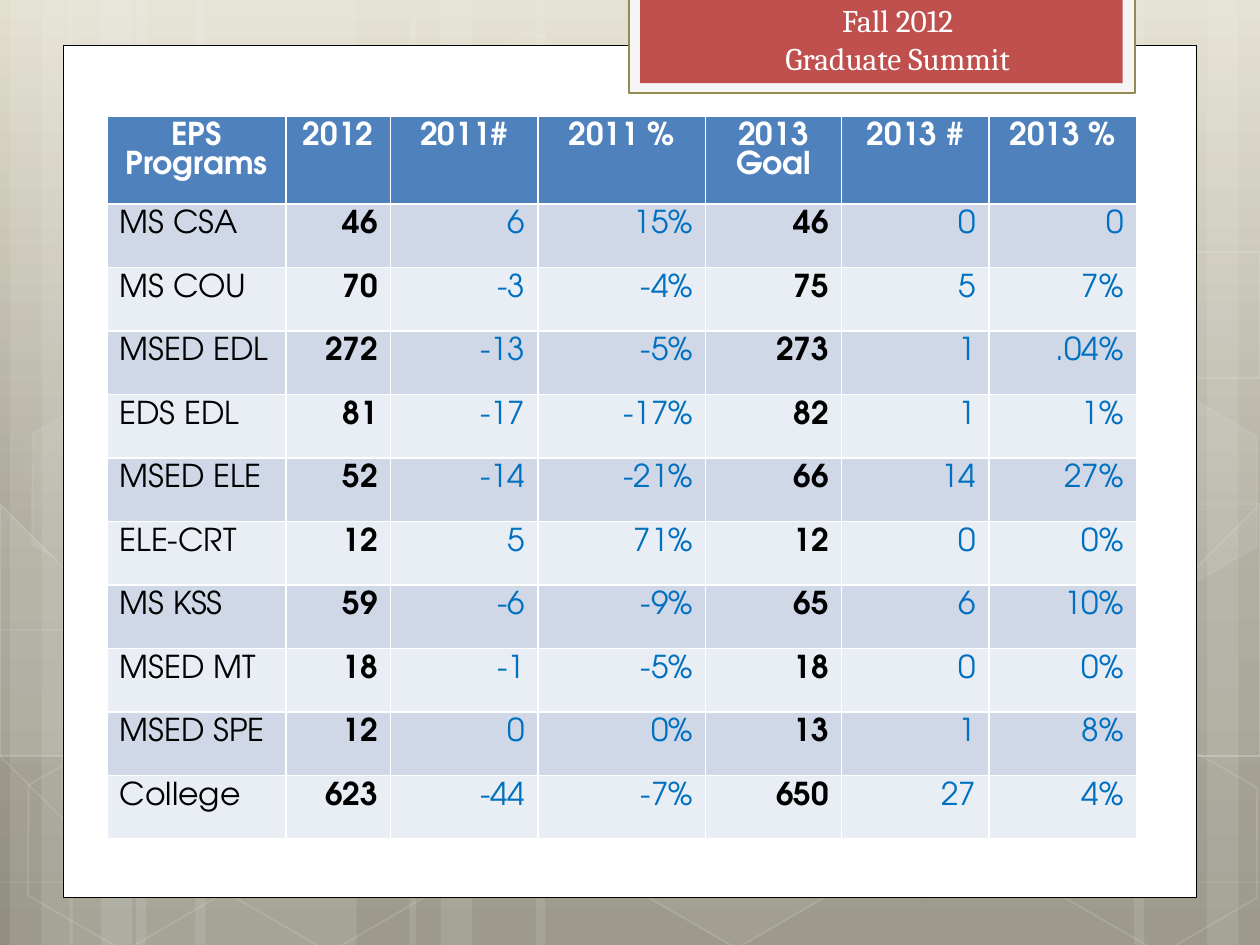
"""Build the Graduate Summit enrolment table slide."""
from copy import deepcopy

from lxml import etree
from pptx import Presentation
from pptx import util as u
from pptx.dml.color import RGBColor
from pptx.enum import shapes, text
from pptx.oxml.ns import qn

W, H = 10, 7.5
C = {"white": "FFFFFF", "black": "000000", "blue": "0070C0", "head": "4F81BD",
     "odd": "D0D8E8", "even": "E9EDF4", "red": "C0504D", "frame": "F5F5F5",
     "olive": "948A54"}
SKY = [(0, "E2DFCF"), (0.62, "A5A293"), (1, "928F80")]
STRIPS = [(1.08, 1.75), (0.08, 0.5), (0.33, 0.83), (1.55, 1.75), (0.55, 0.5),
          (0.8, 0.83), (7.33, 1.75), (9.58, 0.42), (9, 0.83), (4.25, 3.08),
          (3.25, 0.5), (3.5, 0.83)]
CURVES = [
    [(0.07, 6.73), (0.6, 6.76), (1.9, 6.78), (4.58, 6.65), (7.92, 6.17), (9.2, 5.83), (10, 5.53)],
    [(0.07, 4.77), (0.55, 4.53), (1.21, 4.31), (3.47, 3.87), (6.54, 3.87), (10, 4.33)],
    [(0.06, 6.17), (1.2, 6.68), (2.35, 7.15), (3.34, 7.49)],
    [(0.07, 5.78), (1.28, 6.16), (3.57, 6.73), (6.28, 7.18), (8.53, 7.36), (9.45, 7.38), (10, 7.34)],
    [(2.42, 7.49), (2.7, 7.18), (3.02, 6.91), (3.88, 6.39), (4.7, 6.09), (6.08, 5.78),
     (7.94, 5.62), (9.53, 5.62), (10, 5.66)],
]
HEXAGONS = [(3.34, 0.36, 4, 8), (4.97, 5.89, 6, 12), (0.11, 5.91, 0, 12),
            (0.14, 3.12, 7, 8), (1.74, 5.92, 0, 12), (8.34, 5.93, 0, 12),
            (8.34, 3.14, 7, 8)]
CUT_HEXAGONS = [
    ([(0.08, 4.45), (0.19, 4.38), (0.96, 4.82), (0.95, 5.7), (0.2, 6.14), (0.08, 6.07)], 10),
    ([(9.26, 4.85), (10, 4.41), (10, 6.17), (9.26, 5.73)], 4),
    ([(9.26, 2.07), (10, 1.63), (10, 3.39), (9.26, 2.95)], 0),
]
COLS = [1.42, 0.83, 1.17, 1.33, 1.08, 1.17, 1.17]
HEAD_H, TABLE_H = 0.7, 5.74
ROWS = [
    ["EPS Programs", "2012", "2011#", "2011 %", "2013 Goal", "2013 #", "2013 %"],
    ["MS CSA", "46", "6", "15%", "46", "0", "0"],
    ["MS COU", "70", "-3", "-4%", "75", "5", "7%"],
    ["MSED EDL", "272", "-13", "-5%", "273", "1", ".04%"],
    ["EDS EDL", "81", "-17", "-17%", "82", "1", "1%"],
    ["MSED ELE", "52", "-14", "-21%", "66", "14", "27%"],
    ["ELE-CRT", "12", "5", "71%", "12", "0", "0%"],
    ["MS KSS", "59", "-6", "-9%", "65", "6", "10%"],
    ["MSED MT", "18", "-1", "-5%", "18", "0", "0%"],
    ["MSED SPE", "12", "0", "0%", "13", "1", "8%"],
    ["College", "623", "-44", "-7%", "650", "27", "4%"],
]


def rgb(name):
    return RGBColor.from_string(C[name])


def set_alpha(fmt, percent):
    for clr in fmt.iter(qn("a:srgbClr")):
        etree.SubElement(clr, qn("a:alpha")).set("val", str(percent * 1000))


def paint(sp, fill=None, alpha=100, line=None, width=1, line_alpha=100):
    sp.shadow.inherit = False
    if fill:
        sp.fill.solid()
        sp.fill.fore_color.rgb = rgb(fill)
        if alpha < 100:
            set_alpha(sp._element.spPr.find(qn("a:solidFill")), alpha)
    else:
        sp.fill.background()
    if line:
        sp.line.color.rgb = rgb(line)
        sp.line.width = u.Pt(width)
        if line_alpha < 100:
            set_alpha(sp._element.spPr.find(qn("a:ln")), line_alpha)
    else:
        sp.line.fill.background()


def add_shape(s, kind, box, **fmt):
    sp = s.shapes.add_shape(kind, *[u.Inches(v) for v in box])
    paint(sp, **fmt)
    return sp


def add_rect(s, box, **fmt):
    return add_shape(s, shapes.MSO_SHAPE.RECTANGLE, box, **fmt)


def add_path(s, points, close, **fmt):
    fb = s.shapes.build_freeform(*points[0], scale=u.Inches(1))
    fb.add_line_segments(points[1:], close=close)
    paint(fb.convert_to_shape(), **fmt)


def add_hexagon(s, x, y, alpha, line_alpha):
    sp = add_shape(s, shapes.MSO_SHAPE.HEXAGON, (x, y, 1.75, 1.52),
                   fill="white" if alpha else None, alpha=alpha,
                   line="white", line_alpha=line_alpha)
    sp.rotation = 30
    sp.adjustments[0], sp.adjustments[1] = 0.285, 1.155


def write(tf, lines, font, size=18, color="black", bold=False, align="LEFT"):
    for i, line in enumerate(lines):
        p = tf.add_paragraph() if i else tf.paragraphs[0]
        p.alignment = getattr(text.PP_ALIGN, align)
        r = p.add_run()
        r.text = line
        r.font.name, r.font.size, r.font.bold = font, u.Pt(size), bold
        r.font.color.rgb = rgb(color)


def add_background(s):
    fill = s.background.fill
    fill.gradient()
    fill.gradient_angle = 270
    first = fill.gradient_stops[0]._gs
    first.addnext(deepcopy(first))
    for stop, (pos, color) in zip(fill.gradient_stops, SKY):
        stop.position = pos
        stop.color.rgb = RGBColor.from_string(color)
    for x, w in STRIPS:
        add_rect(s, (x, 0, w, H), fill="white", alpha=10)
    for points in CURVES:
        add_path(s, points, False, line="white", width=0.5, line_alpha=20)
    for hexagon in HEXAGONS:
        add_hexagon(s, *hexagon)
    for points, alpha in CUT_HEXAGONS:
        add_path(s, points, True, fill="white" if alpha else None, alpha=alpha,
                 line="white", line_alpha=12)


def add_title(s):
    sp = s.shapes.title
    sp.left, sp.top, sp.width, sp.height = [u.Inches(v) for v in (5.25, -0.04, 3.75, 0.71)]
    tf = sp.text_frame
    tf.word_wrap, tf.auto_size = True, text.MSO_AUTO_SIZE.NONE
    tf.vertical_anchor = text.MSO_ANCHOR.TOP
    write(tf, ["Fall 2012", "Graduate Summit"], "Cambria", color="white", align="CENTER")
    s.shapes._spTree.append(sp._element)


def cell_format(row, col):
    if row == 0:
        return {"color": "white", "bold": True, "align": "CENTER"}
    if col == 0:
        return {}
    if col in (1, 4):
        return {"bold": True, "align": "RIGHT"}
    return {"color": "blue", "align": "RIGHT"}


def add_program_table(s):
    frame = s.shapes.add_table(len(ROWS), len(COLS), u.Inches(0.85), u.Inches(0.92),
                               u.Inches(sum(COLS)), u.Inches(TABLE_H))
    tbl = frame.table
    for col, w in zip(tbl.columns, COLS):
        col.width = u.Inches(w)
    body_h = (TABLE_H - HEAD_H) / (len(ROWS) - 1)
    for i, row in enumerate(ROWS):
        tbl.rows[i].height = u.Inches(body_h if i else HEAD_H)
        for j, value in enumerate(row):
            cell = tbl.cell(i, j)
            cell.fill.solid()
            cell.fill.fore_color.rgb = rgb(("odd" if i % 2 else "even") if i else "head")
            write(cell.text_frame, [value], "TeX Gyre Adventor", **cell_format(i, j))


def main():
    prs = Presentation()
    prs.slide_width, prs.slide_height = u.Inches(W), u.Inches(H)
    s = prs.slides.add_slide(prs.slide_layouts[5])
    add_background(s)
    add_rect(s, (0.5, 0.36, 9, 6.76), fill="white", line="black", width=0.5)
    add_rect(s, (4.99, -0.02, 4.02, 0.76), fill="frame", line="olive", width=1.25)
    add_rect(s, (5.08, -0.02, 3.83, 0.68), fill="red")
    add_title(s)
    add_program_table(s)
    prs.save("out.pptx")


if __name__ == "__main__":
    main()
